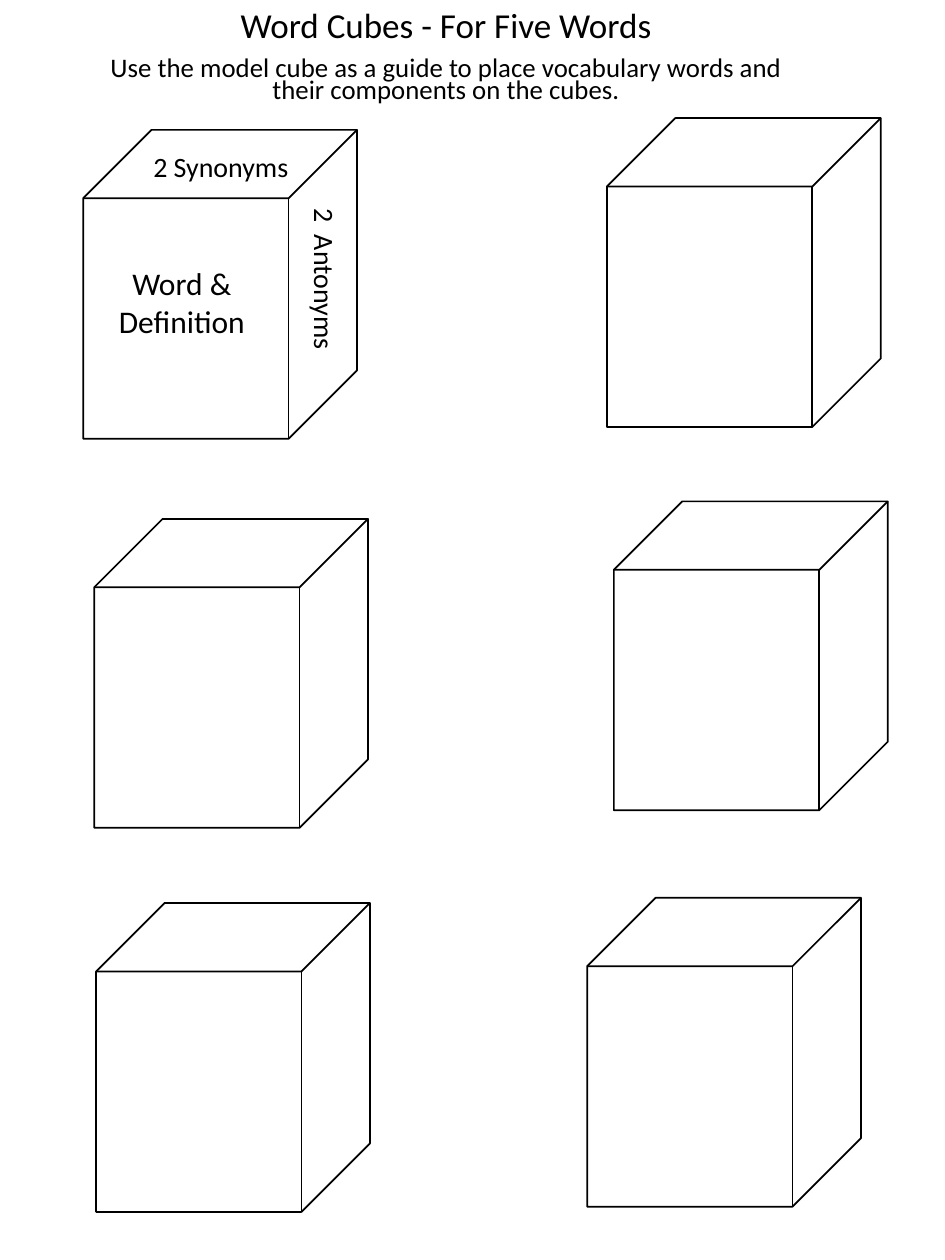
from dataclasses import dataclass

from pptx import Presentation
from pptx.dml.color import RGBColor
from pptx.enum.shapes import MSO_SHAPE
from pptx.enum.text import MSO_ANCHOR, MSO_AUTO_SIZE, PP_ALIGN
from pptx.shapes.autoshape import Shape
from pptx.slide import Slide
from pptx.util import Pt

CUBE = MSO_SHAPE.CUBE
LEFT, CENTER = PP_ALIGN.LEFT, PP_ALIGN.CENTER
TOP, BOTTOM = MSO_ANCHOR.TOP, MSO_ANCHOR.BOTTOM
FIXED, GROW = MSO_AUTO_SIZE.NONE, MSO_AUTO_SIZE.SHAPE_TO_FIT_TEXT
FONT = "Calibri"
BLACK = "000000"
CUBE_WIDTH, CUBE_HEIGHT = 156.5, 176.5


@dataclass(frozen=True)
class Cube:
    left: float
    top: float


@dataclass(frozen=True)
class Label:
    text: str
    left: float
    top: float
    width: float
    height: float
    size: float
    align: PP_ALIGN = CENTER
    wrap: bool = False
    rotation: float = 0


CUBES = [
    Cube(335.5, 513.0),
    Cube(54.9, 516.0),
    Cube(53.8, 296.5),
    Cube(350.8, 286.5),
    Cube(346.8, 67.5),
    Cube(47.5, 74.2),
]

LABELS = [
    Label("2 Synonyms", 80.5, 82.2, 93, 26.6, 16, align=LEFT),
    Label("2  Antonyms", 137.5, 146, 96.5, 26.6, 16, rotation=90),
    Label("Word &\nDefinition", 50.5, 147.5, 106.8, 51, 18, wrap=True),
]


def color(value: str) -> RGBColor:
    return RGBColor.from_string(value)


def place(shape: Shape, left: float, top: float, width: float, height: float) -> None:
    shape.left, shape.top = Pt(left), Pt(top)
    shape.width, shape.height = Pt(width), Pt(height)


def write_text(shape: Shape, text: str, *, size: float, align: PP_ALIGN = CENTER,
               anchor: MSO_ANCHOR = TOP, wrap: bool = True,
               fit: MSO_AUTO_SIZE = FIXED, line_spacing: float = 1.0,
               space_before: float = 0) -> None:
    frame = shape.text_frame
    frame.text = text
    frame.word_wrap = wrap
    frame.auto_size = fit
    frame.vertical_anchor = anchor
    for paragraph in frame.paragraphs:
        paragraph.alignment = align
        paragraph.line_spacing = line_spacing
        paragraph.space_before = Pt(space_before)
        for run in paragraph.runs:
            run.font.name = FONT
            run.font.size = Pt(size)
            run.font.color.rgb = color(BLACK)


def draw_cube(slide: Slide, cube: Cube) -> None:
    shape = slide.shapes.add_shape(CUBE, Pt(cube.left), Pt(cube.top),
                                   Pt(CUBE_WIDTH), Pt(CUBE_HEIGHT))
    shape.shadow.inherit = False
    shape.fill.background()
    shape.line.color.rgb = color(BLACK)
    shape.line.width = Pt(1)


def draw_label(slide: Slide, label: Label) -> None:
    shape = slide.shapes.add_textbox(Pt(label.left), Pt(label.top),
                                     Pt(label.width), Pt(label.height))
    shape.rotation = label.rotation
    write_text(shape, label.text, size=label.size, align=label.align,
               wrap=label.wrap, fit=GROW)


def main() -> None:
    presentation = Presentation()
    presentation.slide_width, presentation.slide_height = Pt(540), Pt(720)
    slide = presentation.slides.add_slide(presentation.slide_layouts[0])

    title, subtitle = slide.placeholders
    place(title, 25.2, 0, 459.4, 30.2)
    write_text(title, "Word Cubes - For Five Words", size=20, anchor=BOTTOM,
               line_spacing=0.9)
    place(subtitle, 52.6, 30.2, 404.6, 34.6)
    write_text(subtitle, "Use the model cube as a guide to place vocabulary words "
               "and their components on the cubes.", size=15.3,
               line_spacing=0.7, space_before=7.5)

    for cube in CUBES:
        draw_cube(slide, cube)
    for label in LABELS:
        draw_label(slide, label)

    presentation.save("out.pptx")


if __name__ == "__main__":
    main()
